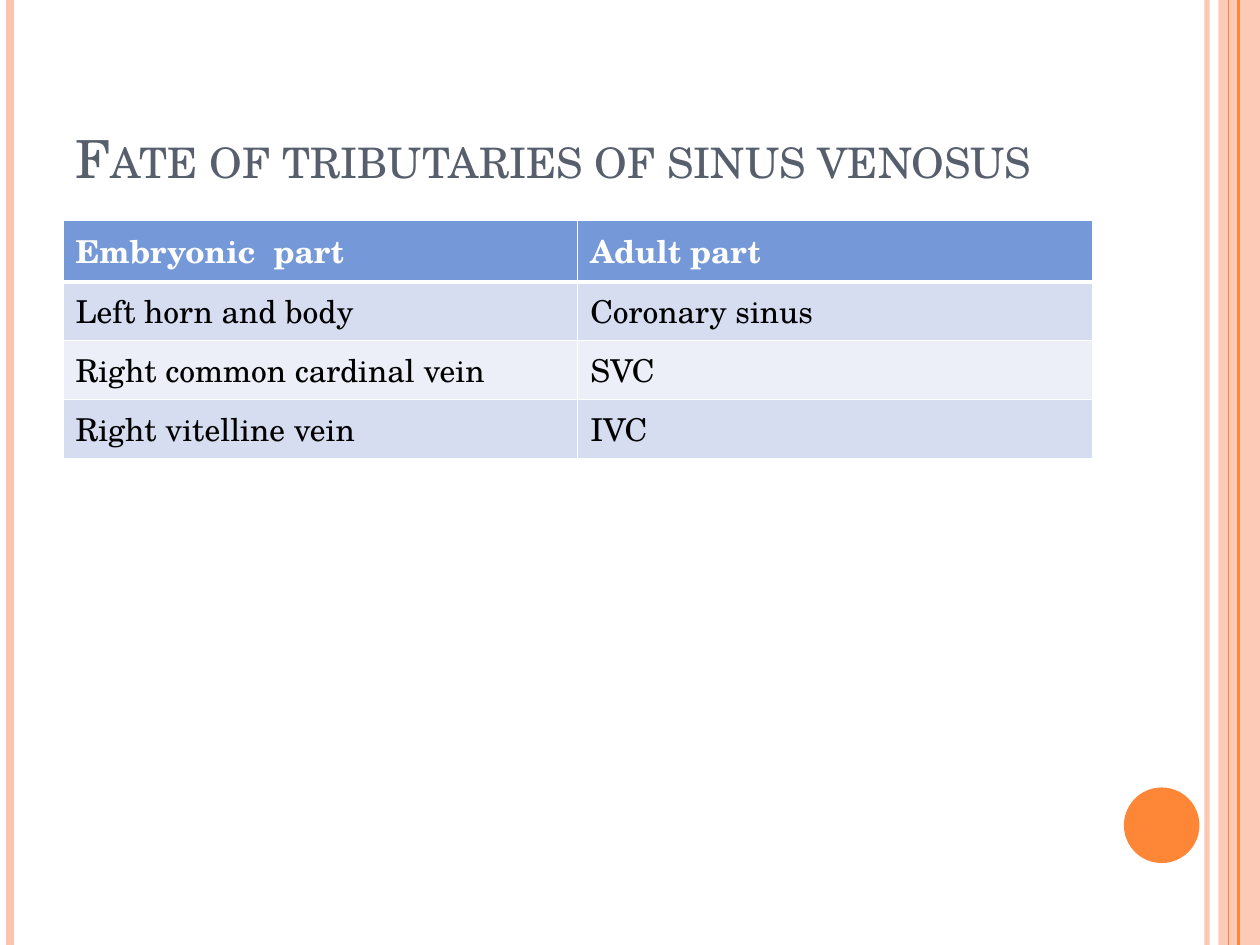
from lxml import etree
from pptx import Presentation
from pptx.dml.color import RGBColor
from pptx.enum.shapes import MSO_CONNECTOR, MSO_SHAPE
from pptx.enum.text import MSO_ANCHOR, PP_ALIGN
from pptx.oxml.ns import qn
from pptx.util import Inches, Pt

LINE = MSO_CONNECTOR.STRAIGHT
RECT, OVAL = MSO_SHAPE.RECTANGLE, MSO_SHAPE.OVAL
LOW, LEFT = MSO_ANCHOR.BOTTOM, PP_ALIGN.LEFT
FONT = "TeX Gyre Schola"
WHITE = RGBColor(0xFF, 0xFF, 0xFF)
BLACK = RGBColor(0, 0, 0)
SLATE = RGBColor(0x57, 0x5F, 0x6D)
PEACH = RGBColor(0xFE, 0xC3, 0xAE)
ORANGE = RGBColor(0xFE, 0x86, 0x37)
BLUE = RGBColor(0x75, 0x98, 0xD9)
PALE = RGBColor(0xD6, 0xDD, 0xF1)
LIGHT = RGBColor(0xEC, 0xEF, 0xF8)


def write(frame, text, size=18, color=BLACK, bold=False, caps=False):
    para = frame.paragraphs[0]
    para.alignment = LEFT
    run = para.add_run()
    run.text = text
    font = run.font
    font.name, font.size, font.bold = FONT, Pt(size), bold
    font.color.rgb = color
    if caps:
        run._r.get_or_add_rPr().set("cap", "small")


def fade(item, share):
    tint = next(item._element.spPr.iter(qn("a:srgbClr")))
    etree.SubElement(tint, qn("a:alpha")).set("val", str(share * 1000))


deck = Presentation()
deck.slide_width, deck.slide_height = Inches(10), Inches(7.5)
wide, high = deck.slide_width, deck.slide_height
slide = deck.slides.add_slide(deck.slide_layouts[5])
shapes = slide.shapes

left, span = Inches(0.5), Inches(8.17)

rules = [
    (9.58, PEACH, 3, 93),
    (0.08, PEACH, 4.5, 100),
    (9.83, ORANGE, 1.5, 100),
    (9.75, ORANGE, 0.75, 100),
]
band = shapes.add_shape(RECT, Inches(9.67), 0, wide - Inches(9.67), high)
ball = shapes.add_shape(OVAL, Inches(8.92), Inches(6.25), Inches(0.6), Inches(0.6))
for item, color in ((band, PEACH), (ball, ORANGE)):
    item.shadow.inherit = False
    item.fill.solid()
    item.fill.fore_color.rgb = color
    item.line.fill.background()
fade(band, 87)

for x, color, width, share in rules:
    rule = shapes.add_connector(LINE, Inches(x), 0, Inches(x), high)
    rule.line.color.rgb = color
    rule.line.width = Pt(width)
    etree.SubElement(rule._element.spPr, qn("a:effectLst"))
    if share < 100:
        fade(rule, share)

title = shapes.title
title.left, title.top = left, Inches(0.3)
title.width, title.height = span, Inches(1.25)
title.text_frame.word_wrap = True
title.text_frame.vertical_anchor = LOW
write(title.text_frame, "Fate of tributaries of sinus venosus",
      size=30, color=SLATE, caps=True)

rows = [
    ("Embryonic  part", "Adult part"),
    ("Left horn and body", "Coronary sinus"),
    ("Right common cardinal vein", "SVC"),
    ("Right vitelline vein", "IVC"),
]
fills = [BLUE, PALE, LIGHT, PALE]
table = shapes.add_table(len(rows), 2, left, Inches(1.75), span,
                         Inches(0.405) * len(rows)).table
for r, texts in enumerate(rows):
    head = r == 0
    for c, text in enumerate(texts):
        cell = table.cell(r, c)
        write(cell.text_frame, text, color=WHITE if head else BLACK, bold=head)
        props = cell._tc.get_or_add_tcPr()
        for side in ("L", "R", "T", "B"):
            thick = (side == "B" and head) or (side == "T" and r == 1)
            edge = etree.SubElement(props, qn("a:ln" + side),
                                    w=str(Pt(3 if thick else 1)))
            paint = etree.SubElement(edge, qn("a:solidFill"))
            etree.SubElement(paint, qn("a:srgbClr"), val=str(WHITE))
        cell.fill.solid()
        cell.fill.fore_color.rgb = fills[r]

deck.save("out.pptx")
